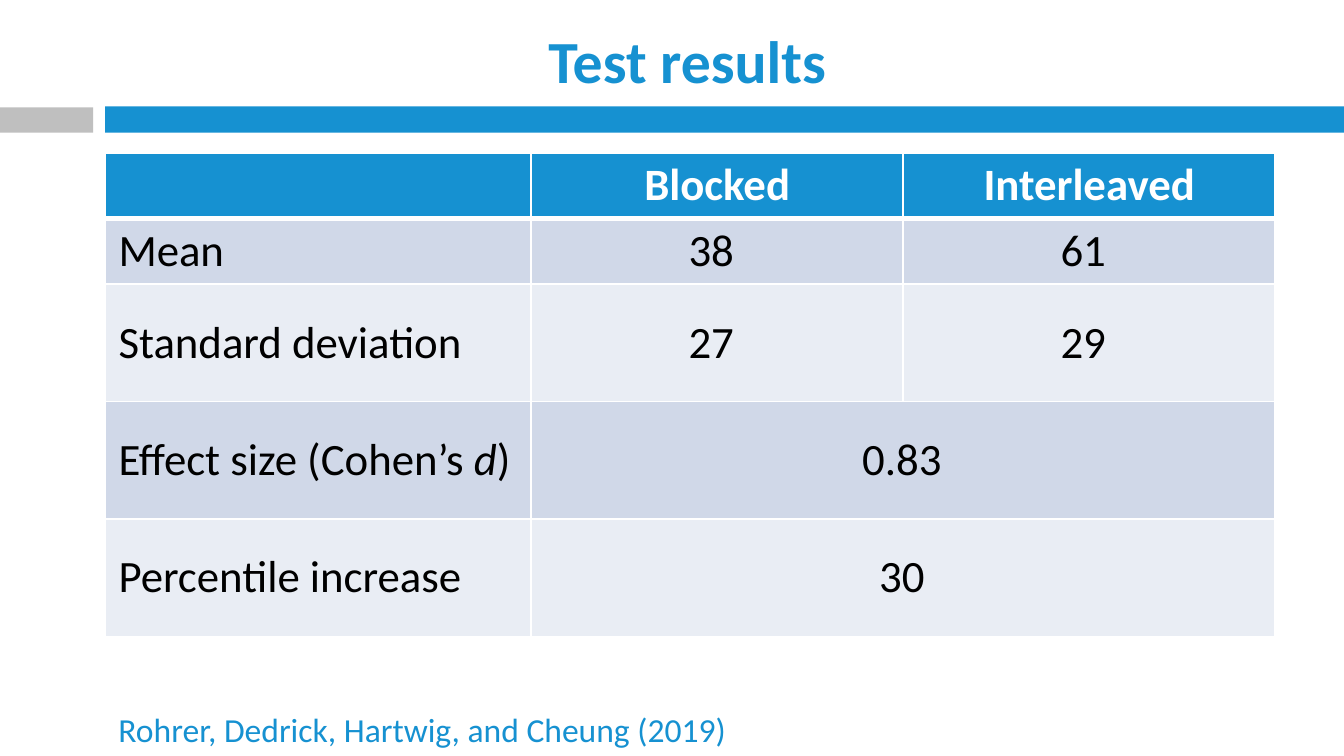
from lxml import etree
from pptx import Presentation
from pptx.dml.color import RGBColor
from pptx.enum.shapes import MSO_SHAPE
from pptx.enum.text import MSO_ANCHOR, PP_ALIGN
from pptx.oxml.ns import qn
from pptx.util import Cm, Pt

LEFT, CENTER, RIGHT = PP_ALIGN.LEFT, PP_ALIGN.CENTER, PP_ALIGN.RIGHT
MIDDLE, TOP = MSO_ANCHOR.MIDDLE, MSO_ANCHOR.TOP
RECT = MSO_SHAPE.RECTANGLE
BLUE, GRAY, WHITE, BLACK = "1691D1", "BFBFBF", "FFFFFF", "000000"
BANDS = ("D0D8E8", "E9EDF4")
MARGIN = 1.99
COLS = (8.05, 7.03, 7.03)
ROWS = (1.24, 1.24, 2.22, 2.22, 2.22)
HEADER = ("", "Blocked", "Interleaved")
BODY = (
    ("Mean", "38", "61"),
    ("Standard deviation", "27", "29"),
    (("Effect size (Cohen’s ", "d", ")"), "0.83"),
    ("Percentile increase", "30"),
)
STAGES = ((5, 3), (3, 3), (3, 2))


def rgb(color):
    return RGBColor.from_string(color)


def write(tf, text, size=24, color=BLACK, bold=False, align=LEFT):
    p = tf.paragraphs[0]
    p.alignment = align
    p.font.size = Pt(size)
    parts = (text,) if isinstance(text, str) else text
    for i, part in enumerate(filter(None, parts)):
        r = p.add_run()
        r.text = part
        r.font.name = "Calibri"
        r.font.size = Pt(size)
        r.font.bold = bold
        r.font.italic = i % 2 == 1
        r.font.color.rgb = rgb(color)


def add_bar(s, x, y, w, h, color):
    sp = s.shapes.add_shape(RECT, Cm(x), Cm(y), Cm(w), Cm(h))
    sp.shadow.inherit = False
    sp.fill.solid()
    sp.fill.fore_color.rgb = rgb(color)
    sp.line.fill.background()


def add_text(s, x, y, w, h, text, anchor=TOP, **fmt):
    tf = s.shapes.add_textbox(Cm(x), Cm(y), Cm(w), Cm(h)).text_frame
    tf.word_wrap = True
    tf.vertical_anchor = anchor
    write(tf, text, **fmt)


def set_borders(cell, bottom):
    tc_pr = cell._tc.get_or_add_tcPr()
    widths = (("a:lnL", 1), ("a:lnR", 1), ("a:lnT", 1), ("a:lnB", bottom))
    for i, (tag, width) in enumerate(widths):
        ln = etree.Element(qn(tag), w=str(Pt(width)))
        fill = etree.SubElement(ln, qn("a:solidFill"))
        etree.SubElement(fill, qn("a:srgbClr"), val=WHITE)
        tc_pr.insert(i, ln)


def fill_cell(cell, text, fill, right=0.25, bottom=1, **fmt):
    cell.fill.solid()
    cell.fill.fore_color.rgb = rgb(fill)
    set_borders(cell, bottom)
    cell.vertical_anchor = MIDDLE
    cell.margin_left, cell.margin_right = Cm(0.25), Cm(right)
    cell.margin_top = cell.margin_bottom = Cm(0.1)
    write(cell.text_frame, text, **fmt)


def add_results(s, x, y, n_rows, n_cols):
    widths, heights = COLS[:n_cols], ROWS[:n_rows]
    shape = s.shapes.add_table(n_rows, n_cols, Cm(x), Cm(y),
                               Cm(sum(widths)), Cm(sum(heights)))
    table = shape.table
    for col, width in zip(table.columns, widths):
        col.width = Cm(width)
    for row, height in zip(table.rows, heights):
        row.height = Cm(height)
    for c, text in enumerate(HEADER[:n_cols]):
        fill_cell(table.cell(0, c), text, BLUE, bottom=3,
                  color=WHITE, bold=True, align=CENTER)
    for r, (label, *values) in enumerate(BODY[:n_rows - 1], start=1):
        band = BANDS[(r - 1) % 2]
        fill_cell(table.cell(r, 0), label, band)
        merged = len(values) == 1
        if merged:
            table.cell(r, 1).merge(table.cell(r, 2))
        for c, value in enumerate(values[:n_cols - 1], start=1):
            fill_cell(table.cell(r, c), value, band,
                      right=0.3 if merged else 3.2,
                      align=CENTER if merged else RIGHT)


def main():
    prs = Presentation()
    prs.slide_width, prs.slide_height = Cm(25.4), Cm(14.29)
    s = prs.slides.add_slide(prs.slide_layouts[6])
    add_bar(s, MARGIN, 2.01, 25.4 - MARGIN, 0.5, BLUE)
    add_bar(s, 0, 2.03, 1.76, 0.48, GRAY)
    full, *partial = STAGES
    add_results(s, MARGIN, 2.89, *full)
    add_text(s, MARGIN, 0.48, 22, 1.3, "Test results", anchor=MIDDLE,
             size=32, color=BLUE, bold=True, align=CENTER)
    add_text(s, MARGIN, 13.28, 12.73, 1.02,
             "Rohrer, Dedrick, Hartwig, and Cheung (2019)",
             size=18, color=BLUE)
    for stage in partial:
        add_results(s, MARGIN, 2.89, *stage)
    prs.save("out.pptx")


if __name__ == "__main__":
    main()
